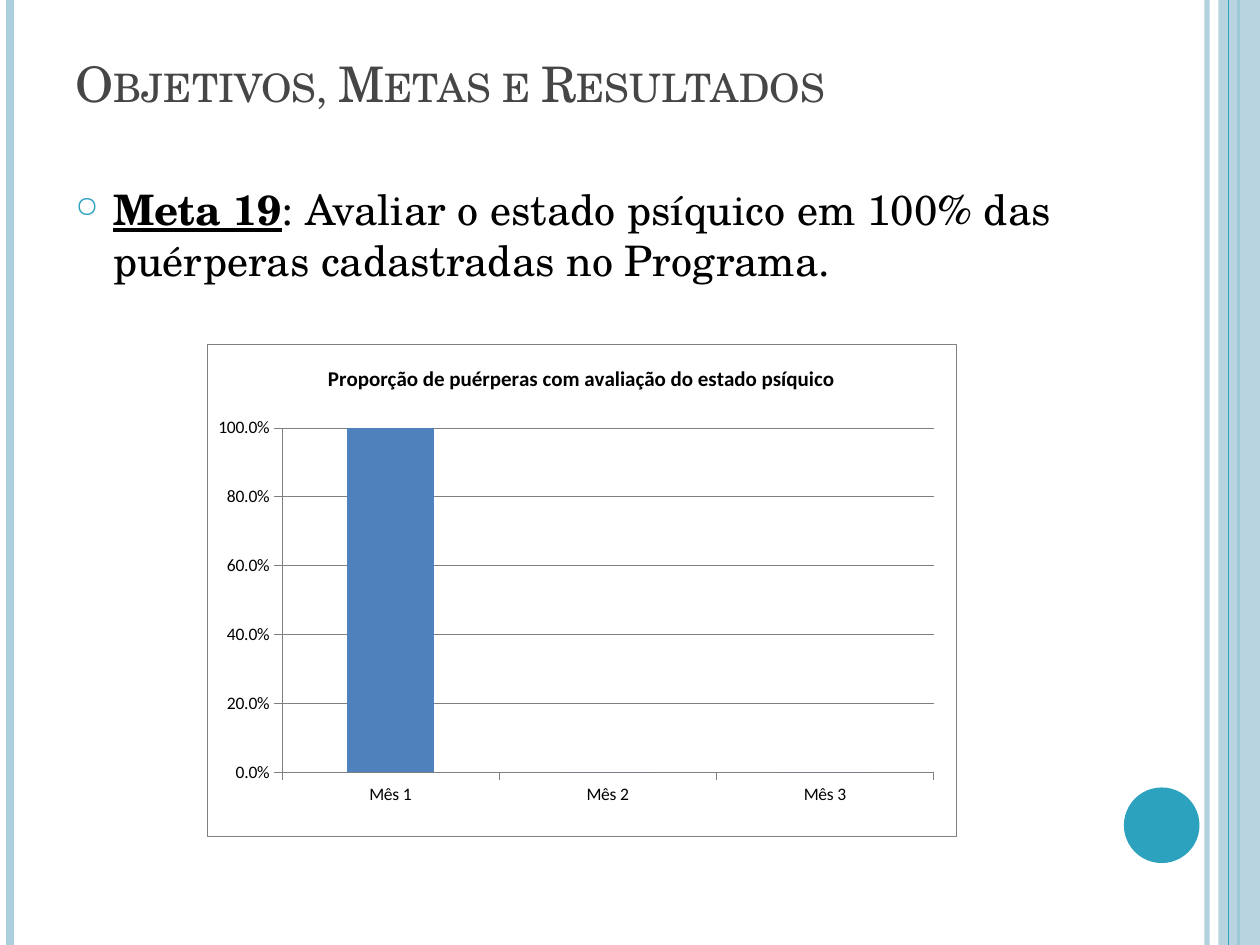
"""Build the slide on goal 19 with its title, goal text and column chart."""
from lxml.etree import SubElement
from pptx import Presentation
from pptx.chart.data import CategoryChartData
from pptx.dml.color import RGBColor
from pptx.enum.chart import XL_CHART_TYPE, XL_TICK_MARK
from pptx.enum.shapes import MSO_CONNECTOR, MSO_SHAPE
from pptx.enum.text import MSO_ANCHOR, MSO_AUTO_SIZE, PP_ALIGN
from pptx.oxml import parse_xml
from pptx.oxml.ns import nsdecls, qn
from pptx.util import Inches, Pt

SERIF, SANS = "TeX Gyre Schola", "Calibri"
PALE, TEAL, GREY = "ADCEDC", "2DA2BF", "808080"


def paint(fmt, color, alpha=100):
    """Set a solid colour, with an opacity in percent, on a fill."""
    fmt.solid()
    fmt.fore_color.rgb = RGBColor.from_string(color)
    if alpha < 100:
        clr = fmt._xPr.find(".//" + qn("a:srgbClr"))
        SubElement(clr, qn("a:alpha"), val=str(alpha * 1000))


def set_font(font, color, **values):
    """Set a font's colour and the given attributes."""
    paint(font.fill, color)
    for name, value in values.items():
        setattr(font, name, value)


prs = Presentation()
prs.slide_width, prs.slide_height = Inches(10), Inches(7.5)
s = prs.slides.add_slide(prs.slide_layouts[5])

stripes = [(9.58, PALE, 3, 93), (0.08, PALE, 4.5, 100), (9.83, TEAL, 1.5, 100),
           (9.75, TEAL, 0.75, 100)]
for x, color, width, alpha in stripes:
    line = s.shapes.add_connector(MSO_CONNECTOR.STRAIGHT, Inches(x), 0, Inches(x), Inches(7.5))
    line.line.width = Pt(width)
    paint(line.line.fill, color, alpha)
    SubElement(line._element.spPr, qn("a:effectLst"))
    if x == 9.83:
        band_anchor = line

blocks = [(MSO_SHAPE.RECTANGLE, 9.67, 0, 0.33, 7.5, PALE, 87),
          (MSO_SHAPE.OVAL, 8.92, 6.25, 0.6, 0.6, TEAL, 100)]
for kind, x, y, w, h, color, alpha in blocks:
    sp = s.shapes.add_shape(kind, Inches(x), Inches(y), Inches(w), Inches(h))
    sp.shadow.inherit = False
    paint(sp.fill, color, alpha)
    sp.line.fill.background()
    if kind == MSO_SHAPE.RECTANGLE:
        band_anchor._element.addnext(sp._element)

title = s.shapes.title
box = dict(left=Inches(0.5), top=Inches(0.3), width=Inches(8.17), height=Inches(0.64))
for name, value in box.items():
    setattr(title, name, value)
tf = title.text_frame
tf.auto_size, tf.vertical_anchor = MSO_AUTO_SIZE.NONE, MSO_ANCHOR.BOTTOM
p = tf.paragraphs[0]
p.alignment = PP_ALIGN.LEFT
r = p.add_run()
r.text = "Objetivos, Metas e Resultados"
set_font(r.font, "464646", name=SERIF, size=Pt(28))
r.font._element.set("cap", "small")

goal = s.shapes.add_textbox(Inches(0.5), Inches(1.41), Inches(8.17), Inches(5.67))
tf = goal.text_frame
tf.word_wrap = True
p = tf.paragraphs[0]
p.space_before = Pt(6)
pPr = p._p.get_or_add_pPr()
pPr.set("marL", str(Inches(0.3)))
pPr.set("indent", str(-Inches(0.3)))
SubElement(SubElement(pPr, qn("a:buClr")), qn("a:srgbClr"), val=TEAL)
SubElement(pPr, qn("a:buSzPct"), val="70000")
SubElement(pPr, qn("a:buChar"), char="○")
for text, strong in [
        ("Meta 19", True),
        (": Avaliar o estado psíquico em 100% das puérperas cadastradas no Programa.", False)]:
    r = p.add_run()
    r.text = text
    set_font(r.font, "000000", name=SERIF, size=Pt(24), bold=strong, underline=strong)

heading = "Proporção de puérperas com avaliação do estado psíquico"
data = CategoryChartData(number_format="0.0%")
data.categories = ["Mês 1", "Mês 2", "Mês 3"]
data.add_series(heading, (1, 0, 0))
chart = s.shapes.add_chart(XL_CHART_TYPE.COLUMN_CLUSTERED, Inches(1.64), Inches(2.73),
                           Inches(5.95), Inches(3.91), data).chart
set_font(chart.font, "000000", name=SANS, size=Pt(10))
chart.has_legend = False
chart.has_title = True
r = chart.chart_title.text_frame.paragraphs[0].add_run()
r.text = heading
set_font(r.font, "000000", name=SANS, size=Pt(12), bold=True)

plot = chart.plots[0]
plot.gap_width, plot.vary_by_categories = 150, False
paint(plot.series[0].format.fill, "4F81BD")

cat, val = chart.category_axis, chart.value_axis
scale = dict(minimum_scale=0, maximum_scale=1, major_unit=0.2, has_major_gridlines=True)
for name, value in scale.items():
    setattr(val, name, value)
val.tick_labels.number_format = "0.0%"
val.tick_labels.number_format_is_linked = False
for axis in (cat, val):
    axis.major_tick_mark = XL_TICK_MARK.OUTSIDE
    set_font(axis.tick_labels.font, "000000", name=SANS, size=Pt(10))
for part in (cat, val, val.major_gridlines):
    part.format.line.width = Pt(0.25)
    paint(part.format.line.fill, GREY)

area = chart._chartSpace.chart.plotArea
for old in area.findall(qn("c:layout")):
    area.remove(old)
layout = SubElement(area, qn("c:layout"))
area.insert(0, layout)
manual = SubElement(layout, qn("c:manualLayout"))
for tag, value in [("layoutTarget", "inner"), ("xMode", "edge"), ("yMode", "edge"),
                   ("x", 0.1), ("y", 0.17), ("w", 0.87), ("h", 0.7)]:
    SubElement(manual, qn("c:" + tag), val=str(value))
chart._chartSpace.chart.addnext(parse_xml(
    f'<c:spPr {nsdecls("c", "a")}><a:solidFill><a:srgbClr val="FFFFFF"/></a:solidFill>'
    f'<a:ln w="{Pt(0.25)}"><a:solidFill><a:srgbClr val="{GREY}"/></a:solidFill></a:ln></c:spPr>'))

prs.save("out.pptx")
